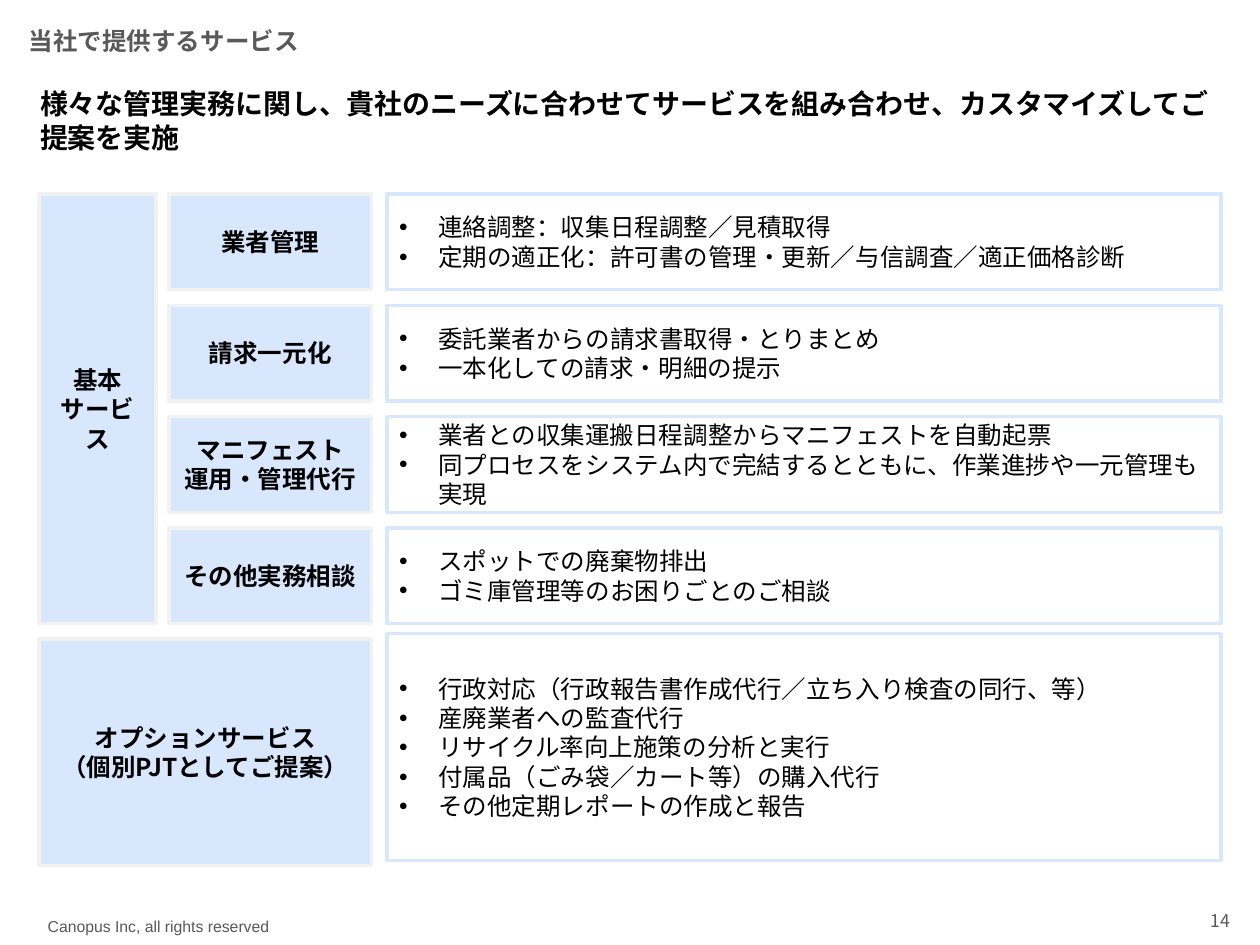
"""Build the slide that lists the services on offer."""
from lxml.etree import SubElement
from pptx import Presentation
from pptx.dml.color import RGBColor
from pptx.enum.shapes import MSO_SHAPE
from pptx.enum.text import MSO_ANCHOR, PP_ALIGN
from pptx.oxml.ns import qn
from pptx.util import Inches, Pt

BLUE = RGBColor(0xD9, 0xE7, 0xFD)
PALE = RGBColor(0xF2, 0xF2, 0xF2)
GRAY = RGBColor(0x59, 0x59, 0x59)
BLACK = RGBColor(0, 0, 0)
FONT = "Noto Sans CJK JP"

COLS = [(0.31, 0.93), (1.34, 1.61), (3.07, 6.62)]
TOP, LAST, HIGH = 1.54, 4.19, 0.76
TALL = 1.8
INDENT = 0.31

BASIC = [
    ("業者管理", ["連絡調整：収集日程調整／見積取得",
              "定期の適正化：許可書の管理・更新／与信調査／適正価格診断"]),
    ("請求一元化", ["委託業者からの請求書取得・とりまとめ",
               "一本化しての請求・明細の提示"]),
    ("マニフェスト\v運用・管理代行", [
        "業者との収集運搬日程調整からマニフェストを自動起票",
        "同プロセスをシステム内で完結するとともに、作業進捗や一元管理も実現"]),
    ("その他実務相談", ["スポットでの廃棄物排出",
                 "ゴミ庫管理等のお困りごとのご相談"]),
]
EXTRA = ["行政対応（行政報告書作成代行／立ち入り検査の同行、等）",
         "産廃業者への監査代行",
         "リサイクル率向上施策の分析と実行",
         "付属品（ごみ袋／カート等）の購入代行",
         "その他定期レポートの作成と報告"]


def span(first, last):
    """Return the left edge and width across a range of columns."""
    left = COLS[first][0]
    return left, sum(COLS[last]) - left


def indent(para, left, hang=0.0):
    """Set the left margin and first-line indent of a paragraph."""
    props = para._p.get_or_add_pPr()
    props.set("marL", str(Inches(left)))
    props.set("indent", str(Inches(hang)))
    return props


def bullet(para):
    """Give a paragraph a round black bullet."""
    props = indent(para, INDENT, -INDENT)
    tint = SubElement(props, qn("a:buClr"))
    SubElement(tint, qn("a:srgbClr"), val=str(BLACK))
    SubElement(props, qn("a:buFont"), typeface="Arial")
    SubElement(props, qn("a:buChar"), char="•")


def write(shape, lines, size=14, color=BLACK, bold=False, font=FONT,
          align=PP_ALIGN.LEFT, anchor=MSO_ANCHOR.MIDDLE, dots=False, left=0):
    """Fill a shape with formatted paragraphs."""
    frame = shape.text_frame
    frame.word_wrap = True
    frame.vertical_anchor = anchor
    for i, line in enumerate(lines):
        para = frame.add_paragraph() if i else frame.paragraphs[0]
        para.text = line
        para.alignment = align
        if dots:
            bullet(para)
        elif left:
            indent(para, left)
        for gap in para._p.findall(qn("a:br")):
            SubElement(gap, qn("a:rPr"), sz=str(size * 100))
        for run in para.runs:
            run.font.size = Pt(size)
            run.font.bold = bold
            run.font.color.rgb = color
            run.font.name = font
            SubElement(run._r.get_or_add_rPr(), qn("a:ea"), typeface=font)
    return frame


def label(slide, at, text, **style):
    """Add a plain text box."""
    box = slide.shapes.add_textbox(*map(Inches, at))
    return write(box, [text], **style)


def block(slide, cols, top, high, line, fill=None):
    """Add an outlined rectangle across a range of columns."""
    left, wide = span(*cols)
    box = slide.shapes.add_shape(
        MSO_SHAPE.RECTANGLE, *map(Inches, (left, top, wide, high)))
    box.shadow.inherit = False
    box.line.color.rgb = line
    box.line.width = Pt(2)
    if fill is None:
        box.fill.background()
    else:
        box.fill.solid()
        box.fill.fore_color.rgb = fill
    return box


def head(slide, cols, top, high, text):
    """Add a blue heading block."""
    box = block(slide, cols, top, high, PALE, BLUE)
    write(box, [text], bold=True, align=PP_ALIGN.CENTER)


def items(slide, top, high, lines):
    """Add a framed bullet list in the last column."""
    write(block(slide, (2, 2), top, high, BLUE), lines, dots=True)


def main():
    """Build and save the deck."""
    deck = Presentation()
    deck.slide_width, deck.slide_height = Inches(10), Inches(7.5)
    slide = deck.slides.add_slide(deck.slide_layouts[6])

    label(slide, (0.01, 0.11, 5.96, 0.43), "当社で提供するサービス",
          color=GRAY, bold=True, left=0.12)
    label(slide, (0.22, 0.64, 9.6, 0.43),
          "様々な管理実務に関し、貴社のニーズに合わせてサービスを組み合わせ、"
          "カスタマイズしてご提案を実施",
          size=16, bold=True, anchor=MSO_ANCHOR.TOP)

    head(slide, (0, 0), TOP, LAST + HIGH - TOP, "基本\vサービス")
    step = (LAST - TOP) / (len(BASIC) - 1)
    for row, (name, lines) in enumerate(BASIC):
        top = TOP + row * step
        head(slide, (1, 1), top, HIGH, name)
        items(slide, top, HIGH, lines)
    head(slide, (0, 1), 5.07, TALL, "オプションサービス\v（個別PJTとしてご提案）")
    items(slide, 5.03, TALL, EXTRA)

    label(slide, (0.28, 7.23, 3.59, 0.25), "Canopus Inc, all rights reserved",
          size=9, color=GRAY, font="Arial", anchor=MSO_ANCHOR.TOP)
    page = label(slide, (9.26, 7.12, 0.6, 0.37), "14", size=10, color=GRAY,
                 align=PP_ALIGN.RIGHT)
    page.margin_top = page.margin_bottom = Inches(0.1)
    deck.save("out.pptx")


if __name__ == "__main__":
    main()
